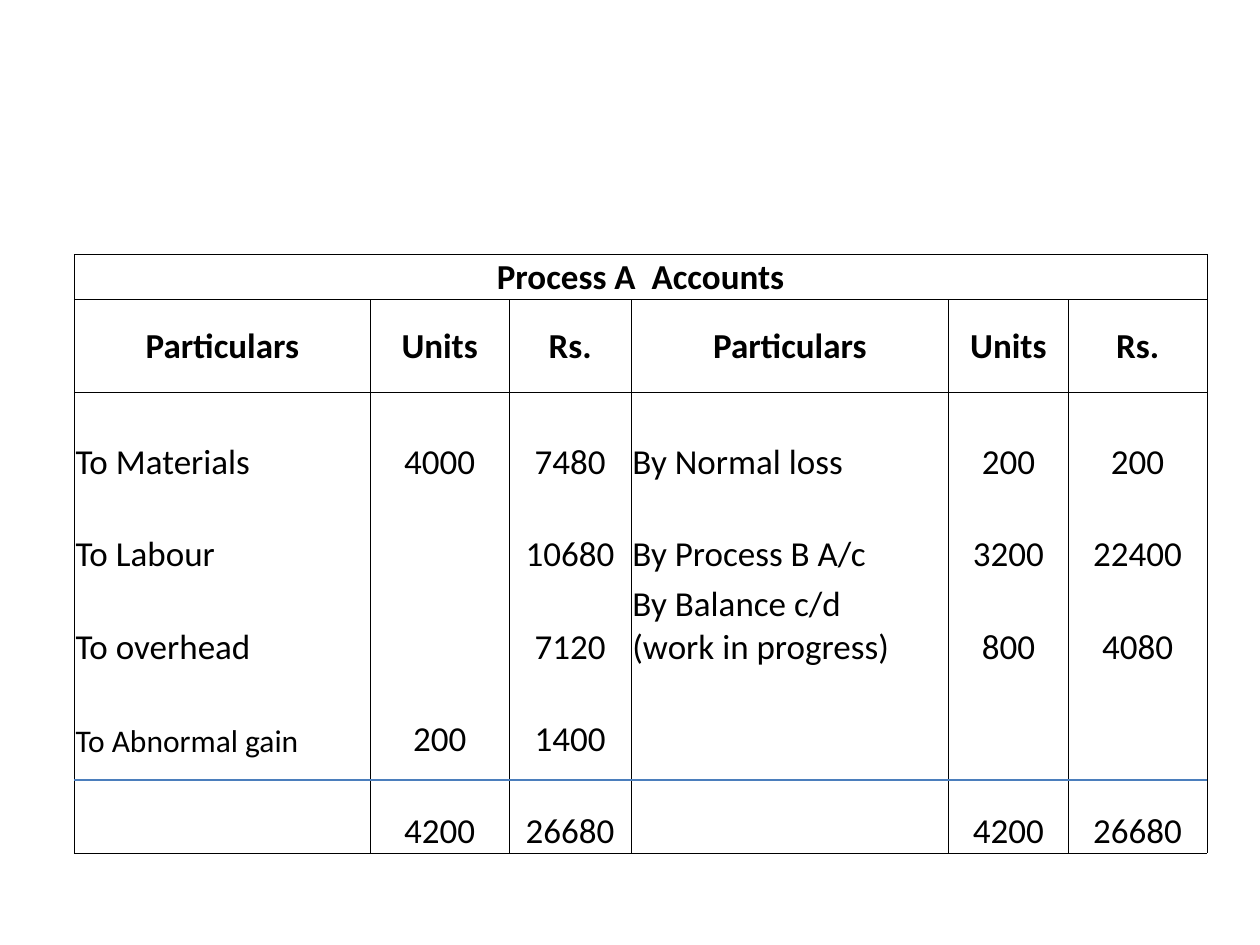
"""Builds the Process A account slide: a ledger table with a rule above its totals."""
from lxml import etree
from pptx import Presentation
from pptx import util as u
from pptx.dml.color import RGBColor
from pptx.enum import shapes, text
from pptx.oxml import ns

COLORS = {"ink": "000000", "rule": "4B7EBC"}
TITLE = "Process A  Accounts"
HEADERS = ["Particulars", "Units", "Rs."] * 2
ENTRIES = [
    ["To Materials", "4000", "7480", "By Normal loss", "200", "200"],
    ["To Labour", "", "10680", "By Process B A/c", "3200", "22400"],
    ["To overhead", "", "7120", "By Balance c/d\n(work in progress)", "800", "4080"],
    ["To Abnormal gain", "200", "1400", "", "", ""],
    ["", "4200", "26680", "", "4200", "26680"],
]
ROWS = [[TITLE] + [""] * 5, HEADERS] + ENTRIES
SMALL_TEXT = "To Abnormal gain"

LEFT, TOP, RULE_Y = 42.5, 145.4, 445.7
COL_WIDTHS = [169.2, 79.2, 69.8, 181.4, 68.4, 79.2]
ROW_HEIGHTS = [25.9] + [52.7] * (len(ROWS) - 1)
CELL_FORMAT = {"margin_left": u.Pt(0.7), "margin_right": u.Pt(0.7),
               "margin_top": u.Pt(0.7), "margin_bottom": 0}


def set_borders(cell, sides):
    tc_pr = cell._tc.get_or_add_tcPr()
    for side in "LRTB":
        ln = etree.SubElement(tc_pr, ns.qn(f"a:ln{side}"), w=str(u.Pt(0.5)))
        if side in sides:
            fill = etree.SubElement(ln, ns.qn("a:solidFill"))
            etree.SubElement(fill, ns.qn("a:srgbClr"), val=COLORS["ink"])
        else:
            etree.SubElement(ln, ns.qn("a:noFill"))


def fill_cell(cell, value, row, col):
    heading = row < 2
    for name, setting in CELL_FORMAT.items():
        setattr(cell, name, setting)
    cell.vertical_anchor = text.MSO_ANCHOR.MIDDLE if heading else text.MSO_ANCHOR.BOTTOM
    set_borders(cell, "LR" + ("T" if row <= 2 else "") + ("B" if heading or row == len(ROWS) - 1 else ""))
    cell.fill.background()
    tf = cell.text_frame
    tf.text = value
    font = {"name": "Calibri", "size": u.Pt(18 if value == SMALL_TEXT else 20), "bold": heading}
    for p in tf.paragraphs:
        p.alignment = text.PP_ALIGN.LEFT if col in (0, 3) and not heading else text.PP_ALIGN.CENTER
        for r in p.runs:
            for name, setting in font.items():
                setattr(r.font, name, setting)
            r.font.color.rgb = RGBColor.from_string(COLORS["ink"])


def add_ledger(s):
    table = s.shapes.add_table(len(ROWS), len(COL_WIDTHS), u.Pt(LEFT), u.Pt(TOP),
                               u.Pt(sum(COL_WIDTHS)), u.Pt(sum(ROW_HEIGHTS))).table
    table.first_row = table.horz_banding = False
    for column, width in zip(table.columns, COL_WIDTHS):
        column.width = u.Pt(width)
    for row, height in zip(table.rows, ROW_HEIGHTS):
        row.height = u.Pt(height)
    for i, values in enumerate(ROWS):
        for j, value in enumerate(values):
            fill_cell(table.cell(i, j), value, i, j)
    table.cell(0, 0).merge(table.cell(0, len(COL_WIDTHS) - 1))


def add_total_rule(s):
    line = s.shapes.add_connector(shapes.MSO_CONNECTOR.STRAIGHT, u.Pt(LEFT), u.Pt(RULE_Y),
                                  u.Pt(LEFT + sum(COL_WIDTHS)), u.Pt(RULE_Y))
    line.line.color.rgb = RGBColor.from_string(COLORS["rule"])
    line.line.width = u.Pt(0.75)
    etree.SubElement(line._element.spPr, ns.qn("a:effectLst"))


def main():
    prs = Presentation()
    prs.slide_width, prs.slide_height = u.Pt(720), u.Pt(540)
    s = prs.slides.add_slide(prs.slide_layouts[6])
    add_ledger(s)
    add_total_rule(s)
    prs.save("out.pptx")


if __name__ == "__main__":
    main()
